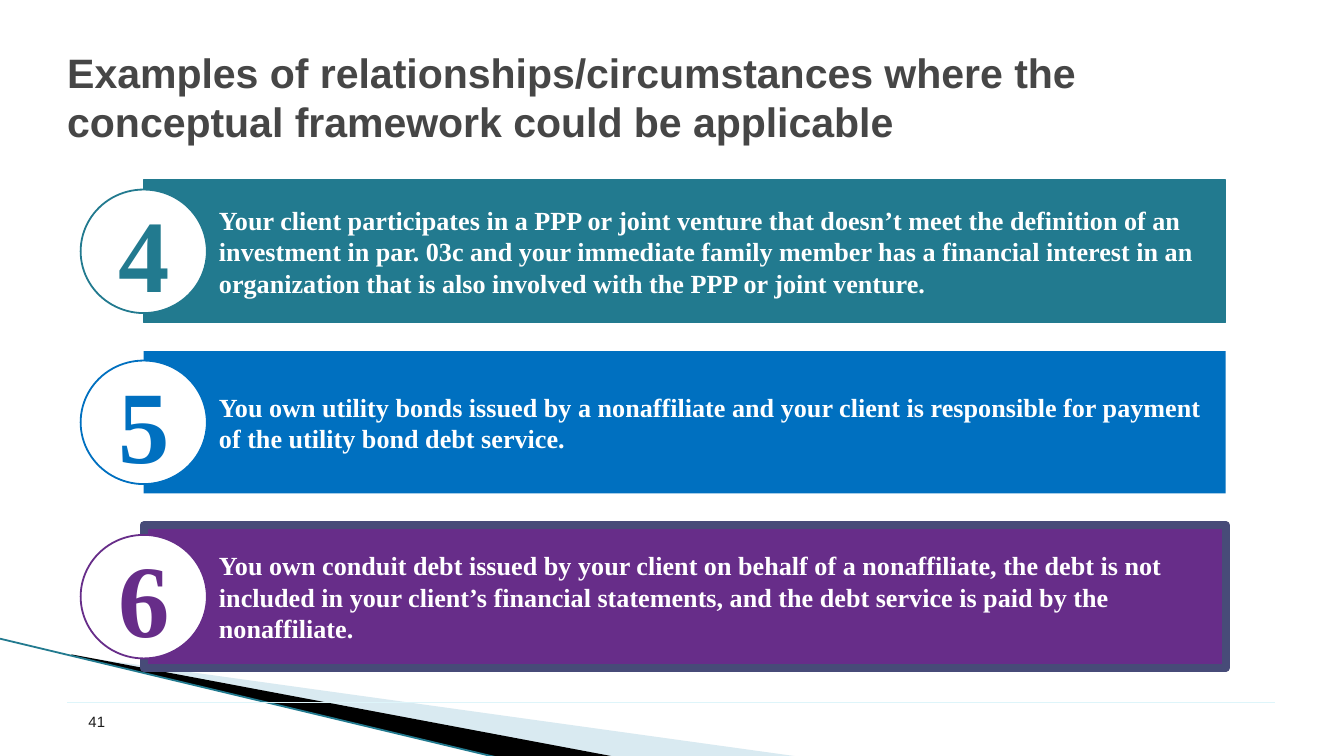
"""Build a slide listing three numbered examples for the conceptual framework."""
from dataclasses import dataclass
from typing import Any, Optional

import lxml.etree
import pptx
import pptx.dml.color
import pptx.enum.shapes
import pptx.enum.text
import pptx.oxml.ns
import pptx.util

Pt = pptx.util.Pt
RGBColor = pptx.dml.color.RGBColor
Shapes = pptx.enum.shapes.MSO_SHAPE
Align = pptx.enum.text.PP_ALIGN
Anchor = pptx.enum.text.MSO_ANCHOR
qn = pptx.oxml.ns.qn

WHITE = RGBColor(0xFF, 0xFF, 0xFF)
BLACK = RGBColor(0x00, 0x00, 0x00)
TEAL = RGBColor(0x22, 0x7A, 0x8F)
BLUE = RGBColor(0x00, 0x70, 0xC0)
PURPLE = RGBColor(0x67, 0x2D, 0x89)
SLATE = RGBColor(0x47, 0x4B, 0x78)
PALE_BLUE = RGBColor(0xA0, 0xCB, 0xDC)
PALE_CYAN = RGBColor(0xDE, 0xF5, 0xFA)
TITLE_GRAY = RGBColor(0x46, 0x46, 0x46)
NUMBER_GRAY = RGBColor(0x1D, 0x1D, 0x1D)

BAR_LEFT, BAR_WIDTH, BAR_HEIGHT = 77, 579.6, 76.3
CIRCLE_WIDTH, CIRCLE_HEIGHT = 67.6, 66.2
INSET = 4.3
INDENT = 36


@dataclass
class Example:
    number: str
    top: float
    color: RGBColor
    text: str
    border: Optional[RGBColor] = None
    border_width: float = 0.75


EXAMPLES = [
    Example("4", 96.5, TEAL, "Your client participates in a PPP or joint venture that doesn’t meet the "
            "definition of an investment in par. 03c and your immediate family member has a financial "
            "interest in an organization that is also involved with the PPP or joint venture.", TEAL),
    Example("5", 188.1, BLUE, "You own utility bonds issued by a nonaffiliate and your client is "
            "responsible for payment of the utility bond debt service."),
    Example("6", 281.5, PURPLE, "You own conduit debt issued by your client on behalf of a nonaffiliate, "
            "the debt is not included in your client’s financial statements, and the debt service is "
            "paid by the nonaffiliate.", SLATE, 4.33),
]


def apply(target: Any, values: dict[str, Any]) -> None:
    """Set each named attribute on the target."""
    for name, value in values.items():
        setattr(target, name, value)


def write(shape: Any, text: str, font: str, size: float, color: RGBColor, bold: bool = True,
          inset: float = 0, align: Any = Align.LEFT) -> Any:
    """Fill a shape with one formatted paragraph and return the paragraph."""
    frame = shape.text_frame
    apply(frame, {"word_wrap": True, "auto_size": pptx.enum.text.MSO_AUTO_SIZE.NONE,
                  "vertical_anchor": Anchor.MIDDLE})
    apply(frame, {f"margin_{side}": Pt(inset) for side in ("left", "top", "right", "bottom")})
    paragraph = frame.paragraphs[0]
    paragraph.alignment = align
    run = paragraph.add_run()
    run.text = text
    apply(run.font, {"name": font, "size": Pt(size), "bold": bold})
    run.font.color.rgb = color
    return paragraph


def paint(shape: Any, fill: RGBColor, border: Optional[RGBColor] = None, width: float = 0.75) -> None:
    """Give a shape a flat fill and an optional border."""
    shape.shadow.inherit = False
    shape.fill.solid()
    shape.fill.fore_color.rgb = fill
    if border is None:
        shape.line.fill.background()
    else:
        shape.line.color.rgb = border
        shape.line.width = Pt(width)


def draw_wedge(slide: Any, points: list[tuple[float, float]], color: RGBColor,
               opacity: Optional[int] = None) -> None:
    """Draw a filled corner wedge."""
    vertices = [(Pt(x), Pt(y)) for x, y in points]
    builder = slide.shapes.build_freeform(*vertices[0], scale=1.0)
    builder.add_line_segments(vertices[1:], close=True)
    shape = builder.convert_to_shape()
    paint(shape, color)
    if opacity is not None:
        color_element = shape.fill._xPr.find(qn("a:solidFill"))[0]
        lxml.etree.SubElement(color_element, qn("a:alpha")).set("val", str(opacity * 1000))


def draw_line(slide: Any, start: tuple[float, float], end: tuple[float, float],
              color: RGBColor, width: float) -> None:
    """Draw a straight line without a shadow."""
    ends = [Pt(value) for value in (*start, *end)]
    connector = slide.shapes.add_connector(pptx.enum.shapes.MSO_CONNECTOR.STRAIGHT, *ends)
    apply(connector.line, {"width": Pt(width)})
    connector.line.color.rgb = color
    lxml.etree.SubElement(connector._element.spPr, qn("a:effectLst"))


def draw_bar(slide: Any, example: Example) -> None:
    """Draw the coloured bar with the wording of an example."""
    bar = slide.shapes.add_shape(Shapes.RECTANGLE, Pt(BAR_LEFT), Pt(example.top),
                                 Pt(BAR_WIDTH), Pt(BAR_HEIGHT))
    paint(bar, example.color, example.border, example.border_width)
    paragraph = write(bar, example.text, "Times New Roman", 14, WHITE, inset=INSET)
    paragraph.level = 1
    properties = paragraph._p.get_or_add_pPr()
    properties.set("marL", str(Pt(INDENT)))
    properties.set("indent", "0")


def draw_circle(slide: Any, example: Example) -> None:
    """Draw the numbered circle centred on the left edge of a bar."""
    top = example.top + (BAR_HEIGHT - CIRCLE_HEIGHT) / 2
    circle = slide.shapes.add_shape(Shapes.OVAL, Pt(BAR_LEFT - CIRCLE_WIDTH / 2), Pt(top),
                                    Pt(CIRCLE_WIDTH), Pt(CIRCLE_HEIGHT))
    paint(circle, WHITE, example.color, 0.96)
    paragraph = write(circle, example.number, "Times New Roman", 55, example.color,
                      inset=INSET, align=Align.CENTER)
    paragraph.space_after = Pt(6)


def main() -> None:
    """Build and save the presentation."""
    presentation = pptx.Presentation()
    apply(presentation, {"slide_width": Pt(720), "slide_height": Pt(405)})
    slide = presentation.slides.add_slide(presentation.slide_layouts[5])

    draw_wedge(slide, [(39.6, 351.4), (428.4, 405.4), (328.3, 405.4)], PALE_BLUE, 40)
    draw_wedge(slide, [(38.2, 350.6), (329, 405.4), (267.8, 406), (38.9, 351.4)], BLACK)
    draw_line(slide, (-0.7, 342), (267.1, 406), TEAL, 0.95)
    draw_line(slide, (36, 376.5), (683.3, 376.5), PALE_CYAN, 0.5)

    title = slide.shapes.title
    apply(title, {"left": Pt(36), "top": Pt(18), "width": Pt(648), "height": Pt(67.7)})
    write(title, "Examples of relationships/circumstances where the conceptual framework "
          "could be applicable", "Arial", 22, TITLE_GRAY)

    for example in EXAMPLES:
        draw_bar(slide, example)
    for example in EXAMPLES:
        draw_circle(slide, example)

    number = slide.shapes.add_textbox(Pt(40.3), Pt(378), Pt(30.2), Pt(17.3))
    write(number, "41", "Arial", 8, NUMBER_GRAY, bold=False, inset=7.2)
    apply(number.text_frame, {"margin_top": Pt(3.6), "margin_bottom": Pt(3.6)})

    presentation.save("out.pptx")


if __name__ == "__main__":
    main()
